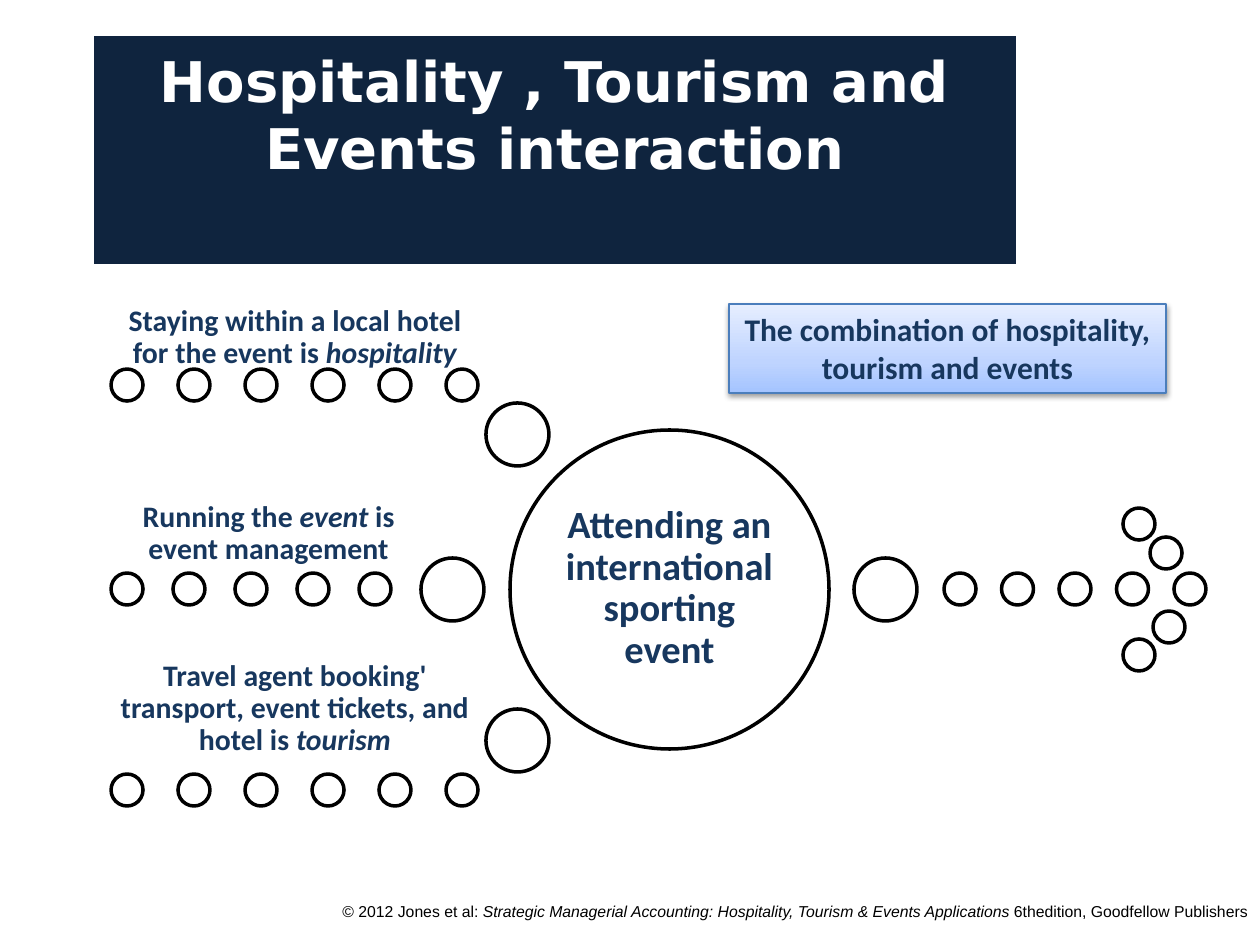
from lxml import etree
from pptx import Presentation
from pptx.dml.color import RGBColor
from pptx.enum.shapes import MSO_SHAPE
from pptx.enum.text import MSO_ANCHOR, PP_ALIGN
from pptx.util import Emu, Pt

OVAL, RECTANGLE = MSO_SHAPE.OVAL, MSO_SHAPE.RECTANGLE
TOP, MIDDLE, BOTTOM = MSO_ANCHOR.TOP, MSO_ANCHOR.MIDDLE, MSO_ANCHOR.BOTTOM
CENTER, RIGHT = PP_ALIGN.CENTER, PP_ALIGN.RIGHT
SCALE = 914400 / 126  # EMU per px
NAVY = "17375E"
DOT, BEAD, HUB = 32, 63, 319

CALLOUT_EFFECTS = """
<root xmlns:a="http://schemas.openxmlformats.org/drawingml/2006/main">
  <a:gradFill rotWithShape="1">
    <a:gsLst>
      <a:gs pos="0"><a:srgbClr val="A4C4FF"/></a:gs>
      <a:gs pos="35000"><a:srgbClr val="BFD4FF"/></a:gs>
      <a:gs pos="100000"><a:srgbClr val="E6EEFF"/></a:gs>
    </a:gsLst>
    <a:lin ang="16200000" scaled="1"/>
  </a:gradFill>
  <a:effectLst>
    <a:outerShdw blurRad="40000" dist="20000" dir="5400000" rotWithShape="0">
      <a:srgbClr val="000000"><a:alpha val="38000"/></a:srgbClr>
    </a:outerShdw>
  </a:effectLst>
</root>"""


def px(*lengths):
    return [Emu(round(length * SCALE)) for length in lengths]


def write_text(shape, pieces, size, color, font="Calibri", bold=True, align=CENTER,
               anchor=TOP, margin=None, spacing=None):
    """Fill a shape with one paragraph; every second piece is italic."""
    frame = shape.text_frame
    frame.word_wrap = True
    frame.vertical_anchor = anchor
    if margin is not None:
        inset = px(margin)[0]
        frame.margin_left = frame.margin_right = inset
        frame.margin_top = frame.margin_bottom = inset
    paragraph = frame.paragraphs[0]
    paragraph.alignment = align
    paragraph.line_spacing = spacing
    for index, piece in enumerate(pieces):
        run = paragraph.add_run()
        run.text = piece
        run.font.name, run.font.size = font, Pt(size)
        run.font.bold, run.font.italic = bold, index % 2 == 1
        run.font.color.rgb = RGBColor.from_string(color)


presentation = Presentation()
presentation.slide_width, presentation.slide_height = px(1260, 945)
slide = presentation.slides.add_slide(presentation.slide_layouts[5])
shapes = slide.shapes

# Title band
title = shapes.title
title.left, title.top, title.width, title.height = px(94, 36, 922, 228)
title.fill.solid()
title.fill.fore_color.rgb = RGBColor.from_string("0F243E")
write_text(title, ["Hospitality , Tourism and Events interaction"], 32, "FFFFFF",
           font="DejaVu Sans", margin=10)

# Copyright line
footer = shapes.add_textbox(*px(281, 896, 979, 49))
write_text(footer, ["© 2012 Jones et al: ",
                    "Strategic Managerial Accounting: Hospitality, Tourism & Events Applications ",
                    "6thedition, Goodfellow Publishers"],
           9, "000000", font="Arial", bold=False, align=RIGHT)

# Circles: hub, beads, arrowhead dots, then evenly spaced rows of dots
circles = [(510, 430, HUB)]
circles += [(left, top, BEAD) for left, top in
            [(486, 403), (421, 558), (486, 709), (854, 558)]]
circles += [(left, top, DOT) for left, top in
            [(1123, 508), (1150, 537), (1153, 611), (1123, 639)]]
dot_rows = [(111, 446, 369, 6), (111, 359, 573, 5), (111, 446, 774, 6), (944, 1174, 573, 5)]
for first, last, top, count in dot_rows:
    step = (last - first) / (count - 1)
    circles += [(first + step * index, top, DOT) for index in range(count)]

for left, top, size in circles:
    circle = shapes.add_shape(OVAL, *px(left, top, size, size))
    circle.shadow.inherit = False
    circle.fill.solid()
    circle.fill.fore_color.rgb = RGBColor.from_string("FFFFFF")
    circle.line.color.rgb = RGBColor.from_string("000000")
    circle.line.width = Pt(2)

# Hub text and the labels above the dot rows
hub_text = shapes.add_textbox(*px(557, 476, 225, 225))
write_text(hub_text, ["Attending an international sporting event"], 22, NAVY,
           anchor=MIDDLE, margin=4, spacing=0.9)
labels = [
    ((111, 289, 368, 81), ["Staying within a local hotel for the event is ", "hospitality"]),
    ((113, 460, 311, 106), ["Running the ", "event", " is event management"]),
    ((111, 636, 368, 121),
     ["Travel agent booking' transport, event tickets, and hotel is ", "tourism"]),
]
for box, pieces in labels:
    label = shapes.add_textbox(*px(*box))
    write_text(label, pieces, 17, NAVY, anchor=BOTTOM, margin=0, spacing=0.9)

# Callout with gradient and soft shadow
callout = shapes.add_shape(RECTANGLE, *px(729, 304, 437, 89))
callout.line.color.rgb = RGBColor.from_string("4B7EBC")
callout.line.width = Pt(0.75)
gradient, effects = etree.fromstring(CALLOUT_EFFECTS)
properties = callout.element.spPr
properties.insert(2, gradient)  # after the position and the geometry
properties.append(effects)
write_text(callout, ["The combination of hospitality, tourism and events"], 18, NAVY)

presentation.save("out.pptx")
